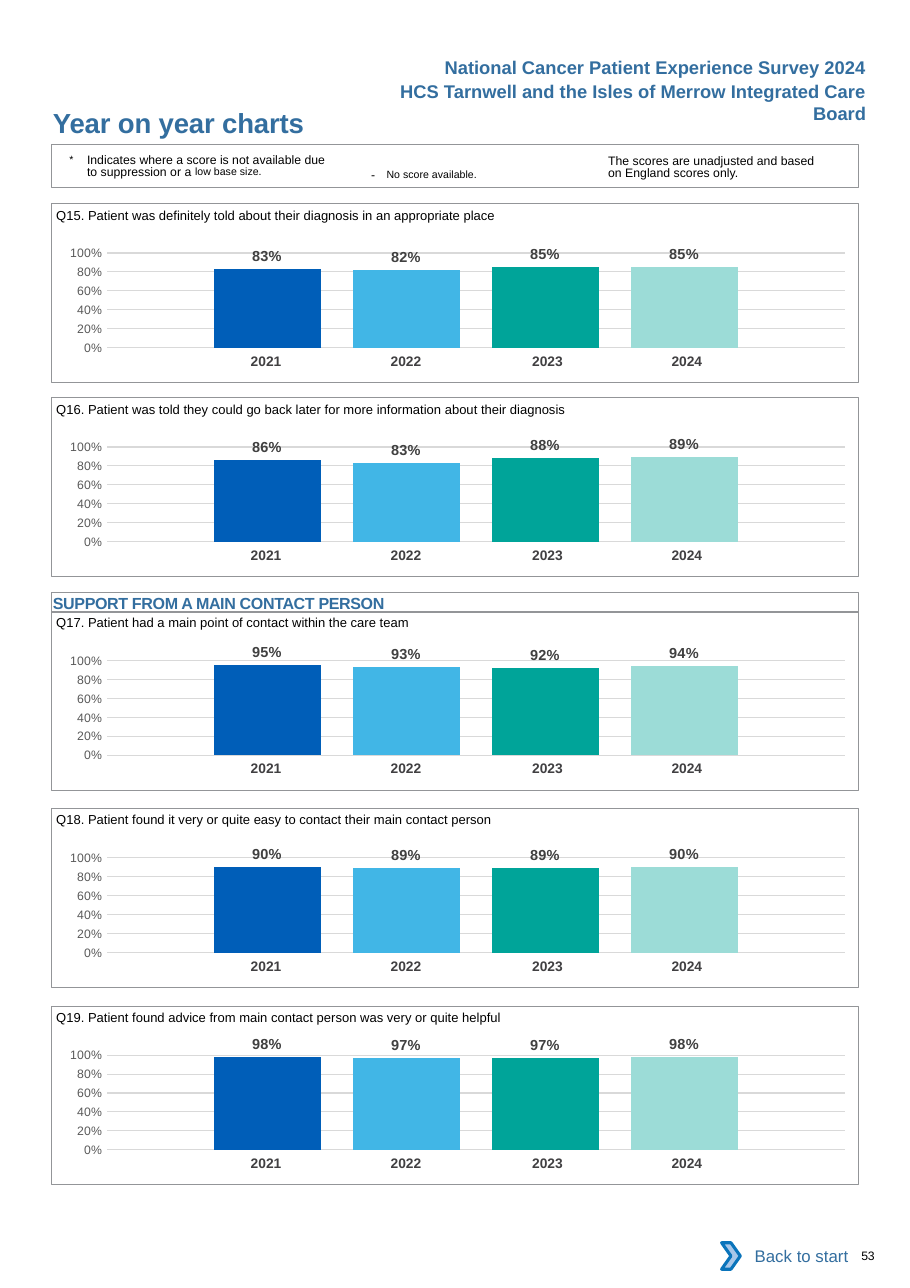
from lxml import etree
from pptx import Presentation
from pptx.chart.data import CategoryChartData
from pptx.dml.color import RGBColor
from pptx.enum.chart import XL_CHART_TYPE, XL_LABEL_POSITION, XL_TICK_MARK
from pptx.enum.shapes import MSO_SHAPE
from pptx.enum.text import MSO_ANCHOR, PP_ALIGN
from pptx.oxml.ns import qn
from pptx.util import Pt

COLUMN_CLUSTERED = XL_CHART_TYPE.COLUMN_CLUSTERED
OUTSIDE_END = XL_LABEL_POSITION.OUTSIDE_END
NO_TICK = XL_TICK_MARK.NONE
RECTANGLE, CHEVRON = MSO_SHAPE.RECTANGLE, MSO_SHAPE.CHEVRON
TOP, MIDDLE = MSO_ANCHOR.TOP, MSO_ANCHOR.MIDDLE
LEFT, CENTER, RIGHT = PP_ALIGN.LEFT, PP_ALIGN.CENTER, PP_ALIGN.RIGHT

EMU_PER_PX = 9144
FONT = "Arial"
NO_TABLE_STYLE = "{2D5ABB26-0587-4C30-8999-92F81FD0307C}"
COLORS = {
    "heading": "336E9F", "text": "000000", "border": "939598", "white": "FFFFFF",
    "year": "414042", "axis": "595959", "grid": "D9D9D9", "label": "404040",
    "arrow": "A8C7E9", "arrow_line": "0A74BB",
}
YEAR_COLORS = {"2021": "005EB8", "2022": "41B6E6", "2023": "00A499", "2024": "9CDCD7"}
YEAR_WIDTHS = (127, 127, 134, 127)
YEAR_RIGHT_INSETS = (0, 0, 4, 12)
PLOT_BOX = {"x": 0.079, "y": 0.145, "w": 0.915, "h": 0.666}
PANEL_LEFT, PANEL_WIDTH, PANEL_HEIGHT = 47, 732, 162
QUESTIONS = [
    (185, "Q15. Patient was definitely told about their diagnosis in an appropriate place",
     (0.83, 0.82, 0.85, 0.85)),
    (361, "Q16. Patient was told they could go back later for more information about their diagnosis",
     (0.86, 0.83, 0.88, 0.89)),
    (555, "Q17. Patient had a main point of contact within the care team",
     (0.95, 0.93, 0.92, 0.94)),
    (734, "Q18. Patient found it very or quite easy to contact their main contact person",
     (0.90, 0.89, 0.89, 0.90)),
    (913, "Q19. Patient found advice from main contact person was very or quite helpful",
     (0.98, 0.97, 0.97, 0.98)),
]


def px(*lengths):
    """Turn px lengths into a list of EMU."""
    return [length * EMU_PER_PX for length in lengths]


def rgb(name):
    """Look up a named colour."""
    return RGBColor.from_string(COLORS[name])


def style_font(font, size, color, bold=False):
    """Set face, size, colour and weight of a font."""
    font.name, font.size, font.bold = FONT, Pt(size), bold
    font.color.rgb = rgb(color)


def style_frame(frame, insets=(0, 0, 0, 0), align=LEFT, anchor=TOP, wrap=True):
    """Set insets, alignment, anchor and wrapping of a text frame."""
    (frame.margin_left, frame.margin_top,
     frame.margin_right, frame.margin_bottom) = px(*insets)
    frame.word_wrap, frame.vertical_anchor = wrap, anchor
    for paragraph in frame.paragraphs:
        paragraph.alignment = align


def write_text(shape, text, size, color, bold=False, spacing=0, **layout):
    """Fill a shape with one evenly formatted paragraph."""
    frame = shape.text_frame
    frame.text = text
    style_frame(frame, **layout)
    for run in frame.paragraphs[0].runs:
        style_font(run.font, size, color, bold)
        run.font._element.set("spc", str(spacing))


def add_outline(slide, box, shape_type=RECTANGLE, fill=None, line=None, width=0.5):
    """Add a preset shape with optional fill and line."""
    shape = slide.shapes.add_shape(shape_type, *px(*box))
    shape.shadow.inherit = False
    if fill:
        shape.fill.solid()
        shape.fill.fore_color.rgb = rgb(fill)
    else:
        shape.fill.background()
    if line:
        shape.line.color.rgb, shape.line.width = rgb(line), Pt(width)
    else:
        shape.line.fill.background()
    return shape


def add_header(slide, left, top, width):
    """Place the survey name, the board name and the page title."""
    lines = ("National Cancer Patient Experience Survey 2024",
             "HCS Tarnwell and the Isles of Merrow Integrated Care Board")
    for row, text in enumerate(lines):
        box = slide.shapes.add_textbox(*px(left + 260, top + 22 * row, width - 260, 30))
        write_text(box, text, 12, "heading", True, insets=(10, 5, 10, 5), align=RIGHT, wrap=False)
    title = slide.shapes.title
    title.left, title.top, title.width, title.height = px(left, top + 50, 450, 30)
    write_text(title, "Year on year charts", 18, "heading", True, spacing=-10, insets=(1, 0, 0, 0))


def add_note(slide, box, insets, runs, line_spacing=None):
    """Add a note of runs given as text, size, baseline and spacing."""
    frame = slide.shapes.add_textbox(*px(*box)).text_frame
    style_frame(frame, insets)
    paragraph = frame.paragraphs[0]
    if line_spacing:
        paragraph.line_spacing = Pt(line_spacing)
    for text, size, baseline, spacing in runs:
        run = paragraph.add_run()
        run.text = text
        style_font(run.font, size, "text")
        run.font._element.set("baseline", str(baseline))
        run.font._element.set("spc", str(spacing))
    return paragraph


def add_legend(slide, left, top, width, height):
    """Place the framed notes on how to read the scores."""
    add_outline(slide, (left, top, width, height), line="border", width=0.75)
    suppressed = add_note(slide, (left + 16, top + 7, 272, 26), (0, 3, 34, 0), [
        ("*\t", 12, 3000, 0),
        ("Indicates where a score is not available due to suppression or a ", 8, 0, 0),
        ("low base size.", 12, 7000, 0)], 8.1)
    indent, = px(16)
    suppressed._p.get_or_add_pPr().set("marL", str(indent))
    suppressed._p.get_or_add_pPr().set("indent", str(-indent))
    add_note(slide, (left + 280, top + 10, 183, 24), (10, 5, 10, 5), [
        ("- ", 8, 0, 260), ("No score available.", 12, 3000, 0)])
    add_note(slide, (left + 505, top + 7, 201, 27), (0, 3, 8, 0), [
        ("The scores are unadjusted and based on England scores only.", 8, 0, 0)], 8.1)


def add_score_chart(slide, box, scores):
    """Add a column chart with one series per year."""
    data = CategoryChartData(number_format="0%")
    data.categories = ["1"]
    for year, score in zip(YEAR_COLORS, scores):
        data.add_series(year, [score])
    chart = slide.shapes.add_chart(COLUMN_CLUSTERED, *px(*box), data).chart
    chart.has_legend = chart.has_title = False
    chart.font.name, chart.font.size = "Calibri", Pt(10)
    chart.font.color.rgb = rgb("text")
    chart.category_axis.visible = False
    axis = chart.value_axis
    axis.minimum_scale, axis.maximum_scale, axis.major_unit = 0, 1, 0.2
    axis.major_tick_mark = axis.minor_tick_mark = NO_TICK
    axis.format.line.fill.background()
    axis.major_gridlines.format.line.color.rgb = rgb("grid")
    axis.major_gridlines.format.line.width = Pt(0.75)
    axis.tick_labels.number_format, axis.tick_labels.number_format_is_linked = "0%", False
    style_font(axis.tick_labels.font, 8, "axis")
    plot = chart.plots[0]
    plot.gap_width, plot.overlap, plot.vary_by_categories = 200, -30, False
    for series, color in zip(plot.series, YEAR_COLORS.values()):
        series.format.fill.solid()
        series.format.fill.fore_color.rgb = RGBColor.from_string(color)
        labels = series.data_labels
        labels.show_value, labels.position = True, OUTSIDE_END
        labels.number_format, labels.number_format_is_linked = "0%", False
        style_font(labels.font, 9.5, "label", True)
    fix_plot_area(chart)


def fix_plot_area(chart):
    """Pin the inner plot area to its share of the chart."""
    area = chart._chartSpace.find(".//" + qn("c:plotArea"))
    for old_layout in area.findall(qn("c:layout")):
        area.remove(old_layout)
    layout = etree.Element(qn("c:layout"))
    manual = etree.SubElement(layout, qn("c:manualLayout"))
    settings = {"layoutTarget": "inner", "xMode": "edge", "yMode": "edge", **PLOT_BOX}
    for name, value in settings.items():
        etree.SubElement(manual, qn("c:" + name)).set("val", str(value))
    area.insert(0, layout)


def add_year_table(slide, left, top):
    """Add the row of years under a chart."""
    box = px(left, top, sum(YEAR_WIDTHS), 27)
    table = slide.shapes.add_table(1, len(YEAR_WIDTHS), *box).table
    table.first_row = table.horz_banding = False
    table._tbl.tblPr.find(qn("a:tableStyleId")).text = NO_TABLE_STYLE
    for index, year in enumerate(YEAR_COLORS):
        table.columns[index].width, = px(YEAR_WIDTHS[index])
        cell = table.cell(0, index)
        cell.fill.background()
        cell.text_frame.text = year
        (cell.margin_left, cell.margin_top, cell.margin_right,
         cell.margin_bottom) = px(10, 5, YEAR_RIGHT_INSETS[index], 5)
        paragraph = cell.text_frame.paragraphs[0]
        paragraph.alignment = CENTER
        style_font(paragraph.runs[0].font, 9, "year", True)


def add_question_panel(slide, left, top, width, height, question, scores):
    """Place one framed question with its chart and years."""
    add_score_chart(slide, (left - 8, top + 26, width, 129), scores)
    add_year_table(slide, left + 126, top + 131)
    add_outline(slide, (left, top, width, height), line="border")
    caption = slide.shapes.add_textbox(*px(left + 3, top - 6, 528, 24))
    write_text(caption, question, 8.5, "text", insets=(1, 9, 0, 0))


def add_section_heading(slide, left, top, width, height):
    """Place the framed section heading."""
    heading = add_outline(slide, (left, top, width, height), line="border")
    write_text(heading, "SUPPORT FROM A MAIN CONTACT PERSON", 10.5, "heading", True,
               spacing=-20, insets=(1, 1, 0, 0))


def add_footer(slide, left, top):
    """Place the way back to the start and the page number."""
    button = add_outline(slide, (left + 7, top, 118, 42), fill="white")
    write_text(button, "Back to start", 11, "heading", insets=(10, 5, 10, 5),
               align=RIGHT, anchor=MIDDLE)
    add_outline(slide, (left, top + 9, 17, 24), CHEVRON, "arrow", "arrow_line", 2)
    page_number = slide.shapes.add_textbox(*px(left + 117, top + 14, 51, 13))
    write_text(page_number, "53", 8, "text", spacing=-20, insets=(10, 0, 0, 0))


def main():
    """Build and save the page."""
    presentation = Presentation()
    presentation.slide_width, presentation.slide_height = px(826, 1169)
    slide = presentation.slides.add_slide(presentation.slide_layouts[5])
    add_header(slide, PANEL_LEFT, 46, 749)
    add_legend(slide, PANEL_LEFT, 131, PANEL_WIDTH, 39)
    for top, question, scores in QUESTIONS:
        add_question_panel(slide, PANEL_LEFT, top, PANEL_WIDTH, PANEL_HEIGHT, question, scores)
    add_section_heading(slide, PANEL_LEFT, 538, PANEL_WIDTH, 18)
    add_footer(slide, 655, 1119)
    presentation.save("out.pptx")


if __name__ == "__main__":
    main()
